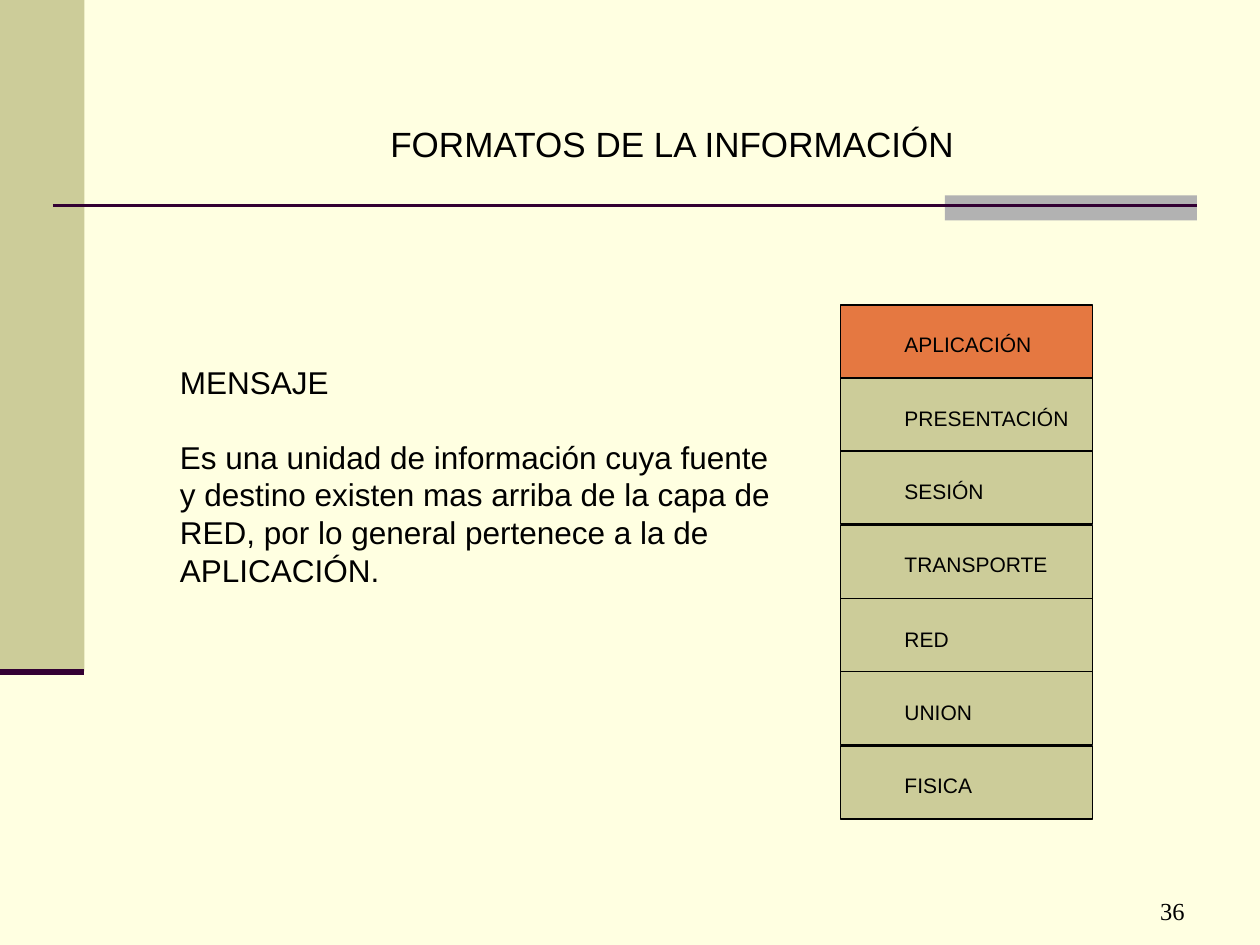
from pptx import Presentation
from pptx.dml.color import RGBColor
from pptx.enum.shapes import MSO_CONNECTOR, MSO_SHAPE
from pptx.enum.text import MSO_AUTO_SIZE, PP_ALIGN
from pptx.oxml.ns import qn
from pptx.util import Inches, Pt

TITLE = "FORMATOS DE LA INFORMACIÓN"
BODY = [
    "MENSAJE",
    "Es una unidad de información cuya fuente y destino existen mas arriba "
    "de la capa de RED, por lo general pertenece a la de APLICACIÓN.",
]
# Layer name and width of its label
LAYERS = [
    ("APLICACIÓN", 1.24),
    ("PRESENTACIÓN", 1.52),
    ("SESIÓN", 0.83),
    ("TRANSPORTE", 1.35),
    ("RED", 0.55),
    ("UNION", 0.74),
    ("FISICA", 0.75),
]
ACTIVE = "APLICACIÓN"
PAGE = "36"

THEME = {
    "back": "FFFFE1", "band": "CCCC99", "tab": "B2B2B2", "rule": "330033",
    "ink": "000000", "hot": "E57841",
    "title": {"name": "Arial", "size": Pt(20)},
    "body": {"name": "Arial", "size": Pt(18)},
    "label": {"name": "Arial", "size": Pt(12)},
    "page": {"name": "Times New Roman", "size": Pt(14)},
}
LEAD = Pt(21.5)

UNIT = 1 / 12               # grid step in inches
COLS, ROWS = 120, 90        # slide size in grid steps
STACK = {"left": 80, "top": 29, "wide": 24, "high": 7}
PAD = {"x": 5, "y": 2}      # label offset inside a layer


def grid(n):
    return Inches(round(n * UNIT, 2))


def color(name):
    return RGBColor.from_string(THEME[name])


def box(slide, x, y, w, h, fill, edge=None):
    shape = slide.shapes.add_shape(MSO_SHAPE.RECTANGLE, *map(grid, (x, y, w, h)))
    shape.shadow.inherit = False
    shape.fill.solid()
    shape.fill.fore_color.rgb = color(fill)
    if edge:
        shape.line.color.rgb = color(edge)
        shape.line.width = Pt(0.75)
    else:
        shape.line.fill.background()


def rule(slide, x1, x2, y, width):
    line = slide.shapes.add_connector(
        MSO_CONNECTOR.STRAIGHT, *map(grid, (x1, y, x2, y)))
    line.line.color.rgb = color("rule")
    line.line.width = Pt(width)
    props = line._element.spPr
    props.append(props.makeelement(qn("a:effectLst"), {}))


def text(slide, x, y, w, h, lines, style, wrap=False, grow=True, **form):
    """Place paragraphs at a grid point; w and h are in inches."""
    frame = slide.shapes.add_textbox(
        grid(x), grid(y), Inches(w), Inches(h)).text_frame
    frame.word_wrap = wrap
    frame.auto_size = (MSO_AUTO_SIZE.SHAPE_TO_FIT_TEXT if grow
                       else MSO_AUTO_SIZE.NONE)
    for i, line in enumerate(lines):
        para = frame.paragraphs[0] if i == 0 else frame.add_paragraph()
        for key, val in form.items():
            setattr(para, key, val)
        run = para.add_run()
        run.text = line
        for key, val in THEME[style].items():
            setattr(run.font, key, val)
        run.font.color.rgb = color("ink")
    return frame


def main():
    deck = Presentation()
    deck.slide_width, deck.slide_height = grid(COLS), grid(ROWS)
    slide = deck.slides.add_slide(deck.slide_layouts[6])
    slide.background.fill.solid()
    slide.background.fill.fore_color.rgb = color("back")

    box(slide, 0, 0, 8, 64, "band")
    box(slide, 90, 18.6, 24, 2.4, "tab")
    rule(slide, 5, 114, 19.6, 1.5)
    rule(slide, 0, 8, 64, 3.5)

    text(slide, 36, 11, 4.77, 0.43, [TITLE], "title")
    body = text(slide, 16, 34, 4.92, 2.2, BODY, "body", wrap=True,
                line_spacing=LEAD)
    body.paragraphs[0].space_after = LEAD

    for i, (name, wide) in enumerate(LAYERS):
        x, y = STACK["left"], STACK["top"] + i * STACK["high"]
        fill = "hot" if name == ACTIVE else "band"
        box(slide, x, y, STACK["wide"], STACK["high"], fill, "ink")
        text(slide, x + PAD["x"], y + PAD["y"], wide, 0.3, [name], "label")

    text(slide, 89, 84.7, 2.08, 0.28, [PAGE], "page", wrap=True, grow=False,
         alignment=PP_ALIGN.RIGHT)
    deck.save("out.pptx")


if __name__ == "__main__":
    main()
